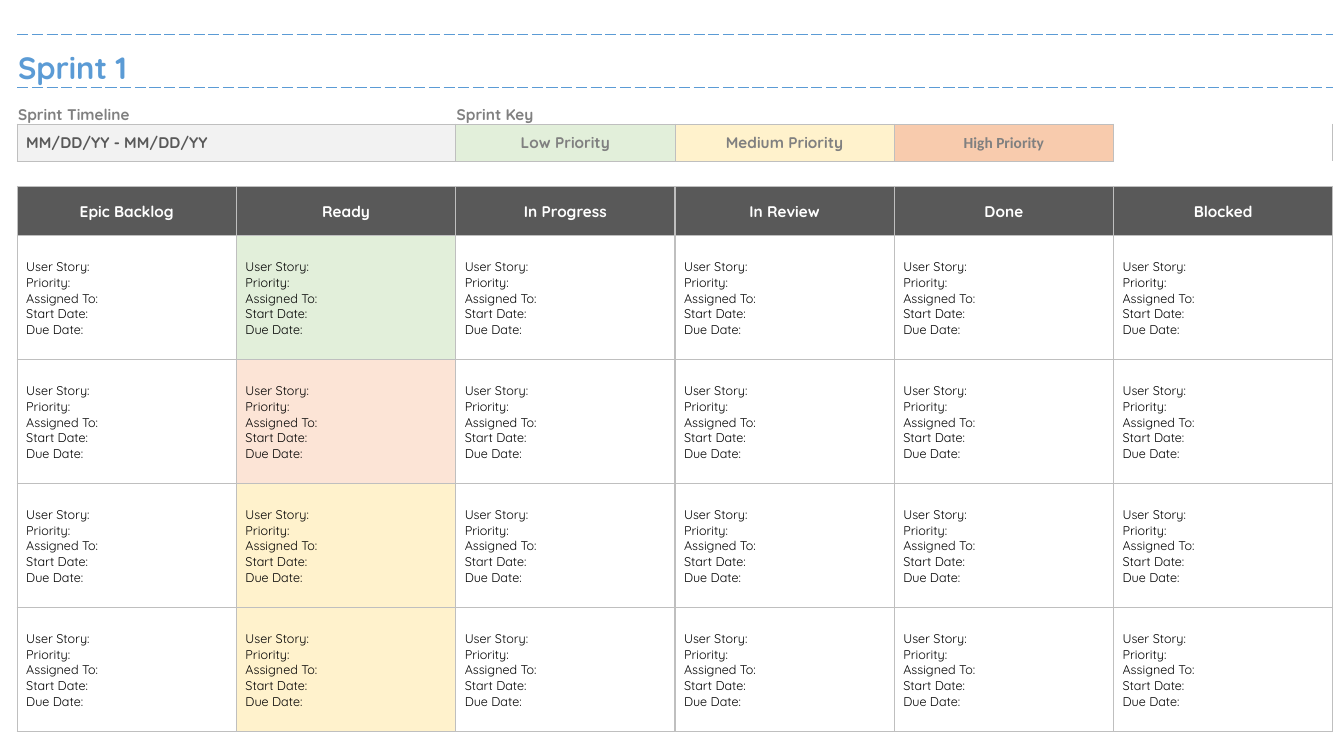
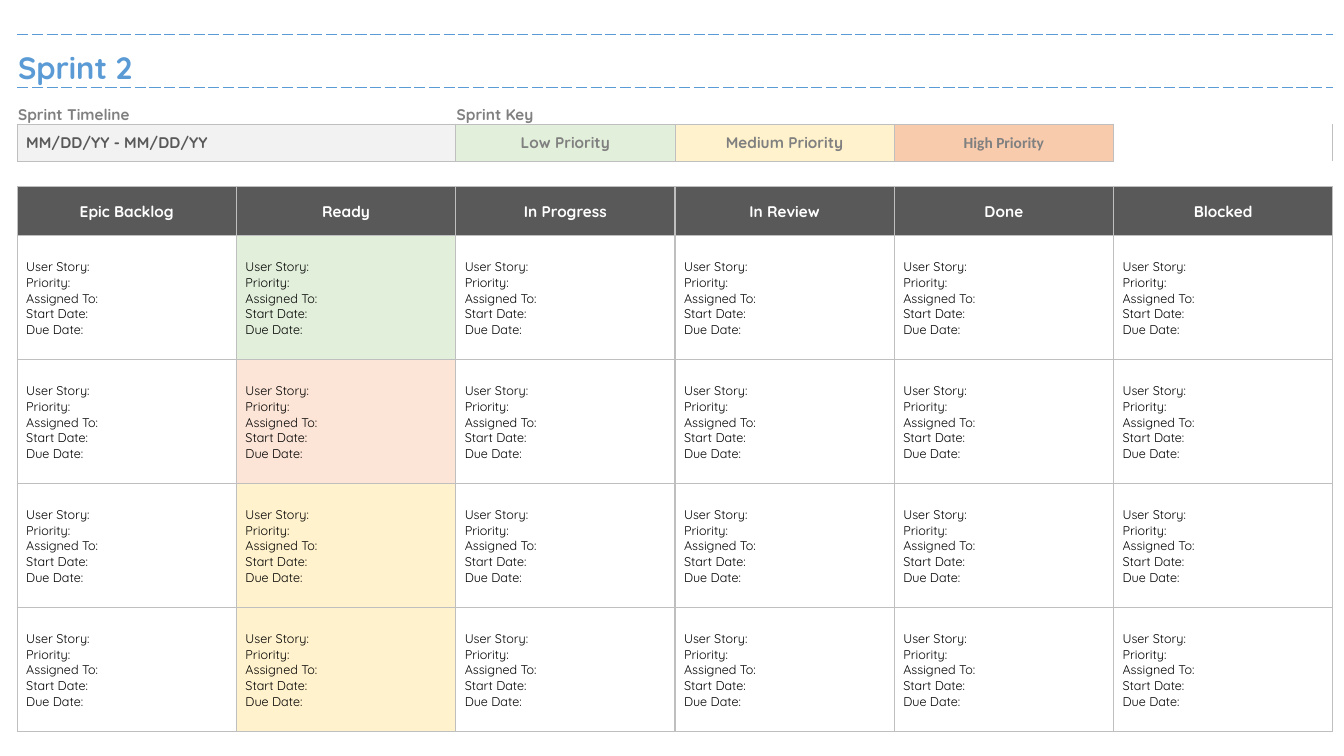
from lxml.etree import SubElement
from pptx import Presentation
from pptx.dml.color import RGBColor
from pptx.enum.text import MSO_ANCHOR as Anchor, PP_ALIGN as Align
from pptx.oxml.ns import qn
from pptx.util import Inches, Pt

COLORS = {
    "accent": "5B9BD5", "grid": "BFBFBF", "dark": "595959", "muted": "808080",
    "white": "FFFFFF", "black": "000000", "date": "F2F2F2", "low": "E2EFDA",
    "medium": "FFF2CC", "high": "F8CBAD", "high_card": "FCE4D6",
}
# Border kinds: colour, width in points, dash
BORDERS = {"grid": ("grid", 1, "solid"), "thin": ("grid", 0.5, "solid"),
           "rule": ("accent", 1, "dash")}
BOXED = dict.fromkeys("LRTB", "grid")
THIN_BOX = dict.fromkeys("LRTB", "thin")
# Text styles: font, colour, alignment, anchor and left inset
BASE = {"font": {"name": "Quicksand", "size": Pt(11), "bold": True}, "color": "muted",
        "align": Align.LEFT, "anchor": Anchor.MIDDLE, "inset": 0.01}
STYLES = {
    "title": {"font": {"size": Pt(22)}, "color": "accent", "anchor": Anchor.BOTTOM},
    "label": {"anchor": Anchor.BOTTOM},
    "date": {"color": "dark", "inset": 0.09},
    "key": {"align": Align.CENTER},
    "key_plain": {"align": Align.CENTER, "font": {"name": "Calibri"}},
    "heading": {"align": Align.CENTER, "color": "white"},
    "card": {"font": {"size": Pt(9), "bold": False}, "color": "black", "inset": 0.09},
}
NO_STYLE = "{2D5ABB26-0587-4C30-8999-92F81FD0307C}"

SPRINTS = ["Sprint 1", "Sprint 2"]
KEYS = [("Low Priority", "low", "key"), ("Medium Priority", "medium", "key"),
        ("High Priority", "high", "key_plain")]
STAGES = ["Epic Backlog", "Ready", "In Progress", "In Review", "Done", "Blocked"]
READY_FILLS = ["low", "high_card", "medium", "medium"]
CARD = "User Story:\nPriority:\nAssigned To:\nStart Date:\nDue Date:"
COLUMNS = len(STAGES)
ROW_HEIGHTS = [0.25, 0.53, 0.36, 0.37, 0.25, 0.49] + [1.23] * len(READY_FILLS)
RULE, TITLE, LABELS, VALUES, GAP, HEADINGS, CARDS = range(7)


class SprintDeck:
    """Holds the presentation, the current slide and its table."""

    def __init__(self):
        self.presentation = Presentation()
        self.presentation.slide_width = Inches(13.33)
        self.presentation.slide_height = Inches(7.5)

    def add_slide(self):
        self.slide = self.presentation.slides.add_slide(self.presentation.slide_layouts[6])

    def add_grid(self, left, top, width):
        frame = self.slide.shapes.add_table(
            len(ROW_HEIGHTS), COLUMNS, Inches(left), Inches(top),
            Inches(width), Inches(sum(ROW_HEIGHTS)))
        self.table = frame.table
        self.table.first_row = self.table.horz_banding = False
        self.table._tbl.tblPr.find(qn("a:tableStyleId")).text = NO_STYLE
        for column in self.table.columns:
            column.width = Inches(width / COLUMNS)
        for row, height in zip(self.table.rows, ROW_HEIGHTS):
            row.height = Inches(height)
        # Small type keeps empty cells from stretching their rows
        for cell in self.table.iter_cells():
            self.set_insets(cell, 0.01)
            cell.fill.background()
            SubElement(cell.text_frame.paragraphs[0]._p, qn("a:endParaRPr"), sz="900")

    def set_insets(self, cell, left):
        insets = {"left": left, "right": 0.01, "top": 0.01, "bottom": 0}
        for side, inset in insets.items():
            setattr(cell, f"margin_{side}", Inches(inset))

    def border(self, row, column, sides):
        properties = self.table.cell(row, column)._tc.get_or_add_tcPr()
        ordered = [side for side in "LRTB" if side in sides]
        for position, side in enumerate(ordered):
            color, width, dash = BORDERS[sides[side]]
            line = SubElement(properties, qn(f"a:ln{side}"), w=str(Pt(width)))
            fill = SubElement(line, qn("a:solidFill"))
            SubElement(fill, qn("a:srgbClr"), val=COLORS[color])
            SubElement(line, qn("a:prstDash"), val=dash)
            properties.insert(position, line)

    def set_cell(self, row, column, text, style_name, fill=None, span=1):
        style = {**BASE, **STYLES[style_name]}
        cell = self.table.cell(row, column)
        if span > 1:
            cell.merge(self.table.cell(row, column + span - 1))
        if fill:
            cell.fill.solid()
            cell.fill.fore_color.rgb = RGBColor.from_string(COLORS[fill])
        cell.vertical_anchor = style["anchor"]
        self.set_insets(cell, style["inset"])
        paragraph = cell.text_frame.paragraphs[0]
        paragraph.alignment = style["align"]
        for index, text_line in enumerate(text.split("\n")):
            if index:
                paragraph.add_line_break()
            run = paragraph.add_run()
            run.text = text_line
            for name, value in {**BASE["font"], **style["font"]}.items():
                setattr(run.font, name, value)
            run.font.color.rgb = RGBColor.from_string(COLORS[style["color"]])

    def header(self, title):
        # Dashed rule and title
        for column in range(COLUMNS):
            self.border(RULE, column, {"B": "rule"})
            self.border(TITLE, column, {"T": "rule"})
        self.set_cell(TITLE, 0, title, "title")
        # Timeline and priority key
        for column, label in [(0, "Sprint Timeline"), (2, "Sprint Key")]:
            self.set_cell(LABELS, column, label, "label", span=2)
        self.set_cell(VALUES, 0, "MM/DD/YY - MM/DD/YY", "date", "date", span=2)
        for column in (0, 2, 4):
            self.border(LABELS, column, {"B": "thin"})
        self.border(VALUES, 0, THIN_BOX)
        for column, (text, fill, style) in enumerate(KEYS, 2):
            self.set_cell(VALUES, column, text, style, fill)
            self.border(VALUES, column, THIN_BOX)
        self.border(VALUES, COLUMNS - 1, {"L": "thin"})

    def board(self):
        # Stage headings; the middle ones have no top border
        for column, stage in enumerate(STAGES):
            outer = column in (0, 1, COLUMNS - 1)
            gap_sides = {"T": "thin"} if column < COLUMNS - 1 else {}
            self.border(GAP, column, {**gap_sides, **({"B": "grid"} if outer else {})})
            self.set_cell(HEADINGS, column, stage, "heading", "dark")
            self.border(HEADINGS, column,
                        BOXED if outer else dict.fromkeys("LRB", "grid"))
        # Story cards, coloured by priority in the Ready column
        for row, ready_fill in enumerate(READY_FILLS, CARDS):
            for column, stage in enumerate(STAGES):
                self.set_cell(row, column, CARD, "card",
                              ready_fill if stage == "Ready" else None)
                self.border(row, column, BOXED)


def main():
    deck = SprintDeck()
    for sprint in SPRINTS:
        deck.add_slide()
        deck.add_grid(0.17, 0.09, 13.05)
        deck.header(sprint)
        deck.board()
    deck.presentation.save("out.pptx")


if __name__ == "__main__":
    main()
